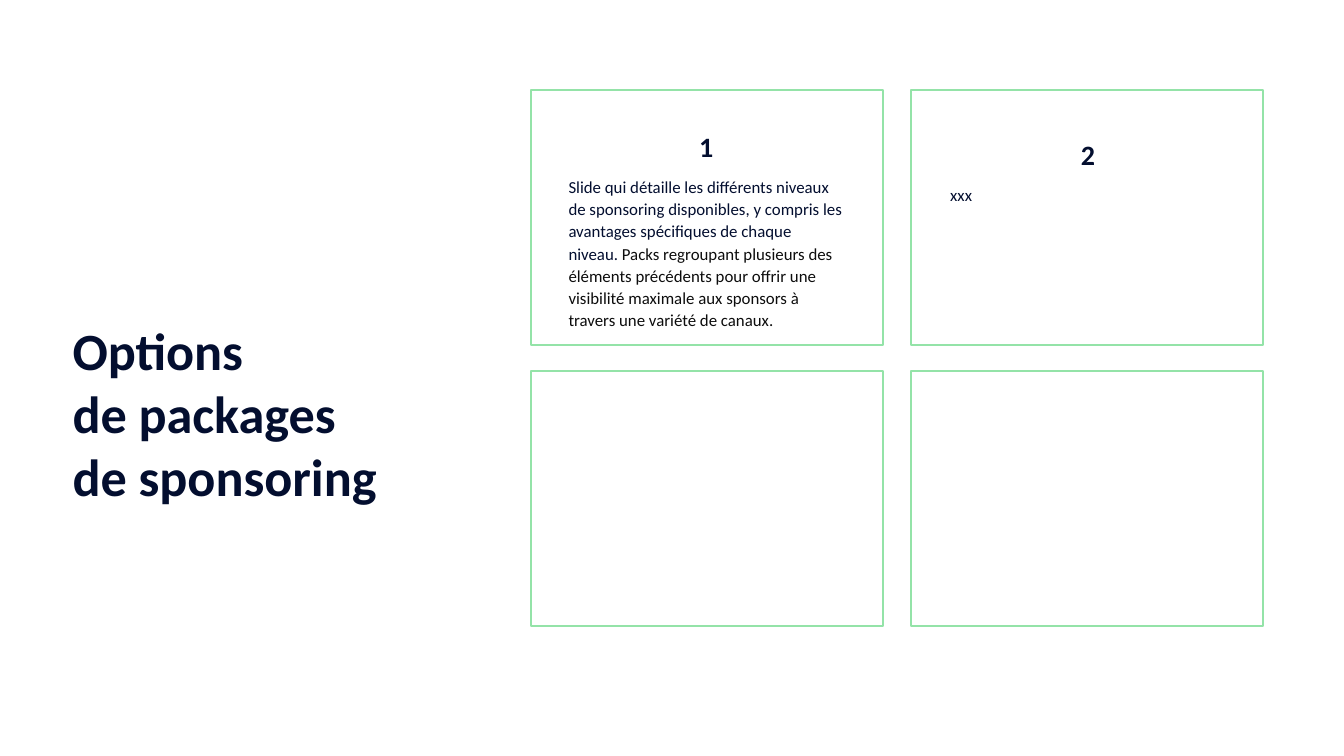
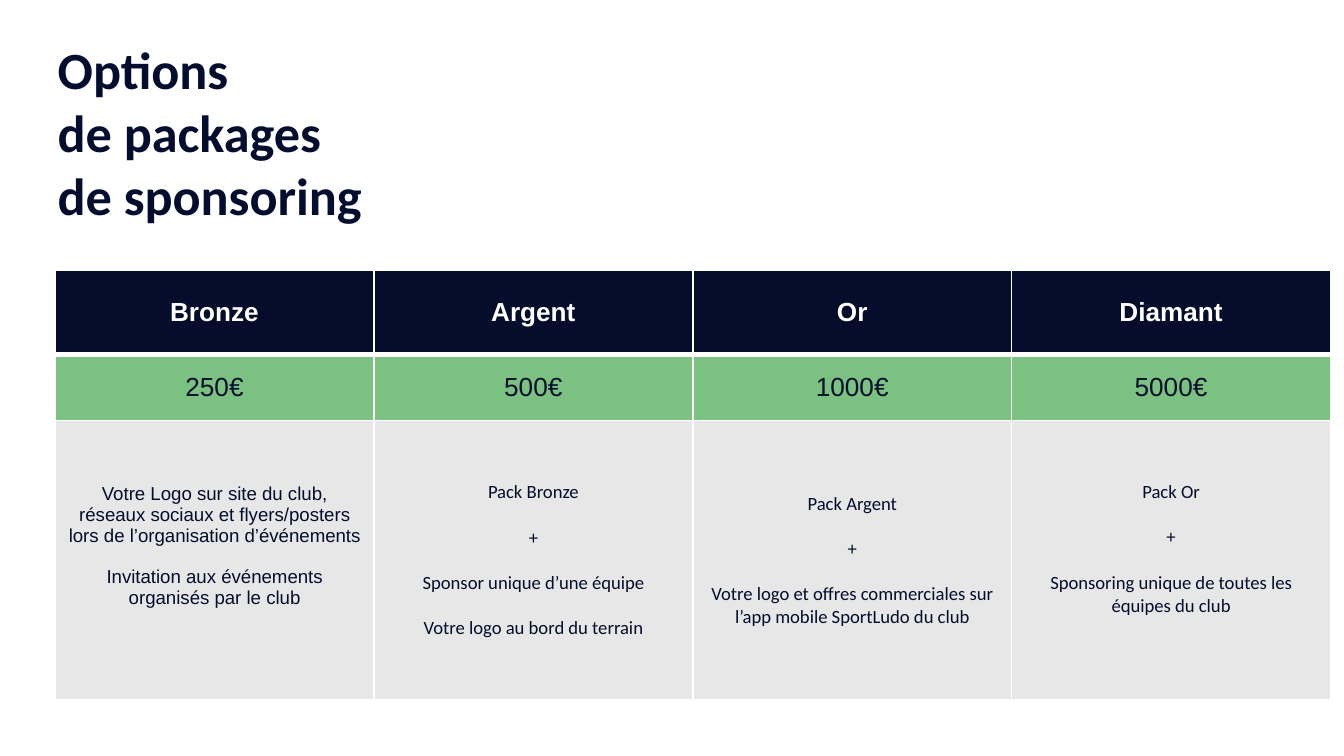
from lxml import etree
from pptx import Presentation
from pptx import util as u
from pptx.dml.color import RGBColor
from pptx.enum import shapes, text
from pptx.oxml import ns

NAVY = RGBColor(0x03, 0x0E, 0x2F)
TABLE_NAVY = RGBColor(0x04, 0x0E, 0x2C)
BLACK = RGBColor(0x0D, 0x0D, 0x0D)
WHITE = RGBColor(0xFF, 0xFF, 0xFF)
MINT = RGBColor(0x94, 0xE3, 0xA8)
GREEN = RGBColor(0x7A, 0xC1, 0x82)
GREY = RGBColor(0xE7, 0xE7, 0xE8)

TITLE = ["Options", "de packages", "de sponsoring"]
CARD_LEFTS = (3.95, 6.78)
CARD_TOPS = (0.67, 2.76)
CARD_TEXT = [
    ("Slide qui détaille les différents niveaux de sponsoring disponibles, y compris les "
     "avantages spécifiques de chaque niveau. ", NAVY),
    ("Packs regroupant plusieurs des éléments précédents pour offrir une visibilité maximale "
     "aux sponsors à travers une variété de canaux.", BLACK),
]
PACKS = [
    ("Bronze", "250€", "Arial", 0.26, [
        "Votre Logo sur site du club, réseaux sociaux et flyers/posters "
        "lors de l’organisation d’événements",
        "Invitation aux événements organisés par le club"]),
    ("Argent", "500€", "Calibri", 0.05, [
        "Pack Bronze", "+", "Sponsor unique d’une équipe", "Votre logo au bord du terrain"]),
    ("Or", "1000€", "Calibri", 0.05, [
        "Pack Argent", "+",
        "Votre logo et offres commerciales sur l’app mobile SportLudo du club"]),
    ("Diamant", "5000€", "Calibri", 0.22, [
        "Pack Or", "+", "Sponsoring unique de toutes les équipes du club"]),
]


def write(frame, paragraphs, size, font="Calibri", color=NAVY, bold=False,
          align=text.PP_ALIGN.LEFT, spacing=None, gap=0):
    """Fill a text frame; a paragraph is a string or a list of (text, colour) spans."""
    for index, content in enumerate(paragraphs):
        para = frame.paragraphs[0] if index == 0 else frame.add_paragraph()
        para.alignment = align
        if spacing:
            para.line_spacing = spacing
        if index and gap:
            para.space_before = u.Pt(gap)
        spans = [(content, color)] if isinstance(content, str) else content
        for words, shade in spans:
            span = para.add_run()
            span.text = words
            span.font.name = font
            span.font.size = u.Pt(size)
            span.font.bold = bold
            span.font.color.rgb = shade


def add_text(page, left, top, width, height, paragraphs, anchor=text.MSO_ANCHOR.MIDDLE, **style):
    """Add a wrapping text box with narrow margins."""
    box = page.shapes.add_textbox(*map(u.Inches, (left, top, width, height)))
    frame = box.text_frame
    frame.word_wrap = True
    frame.vertical_anchor = anchor
    frame.margin_left = frame.margin_right = u.Inches(0.02)
    frame.margin_top = frame.margin_bottom = u.Inches(0.02)
    write(frame, paragraphs, **style)
    return box


def add_title(page, left, top):
    """Add the three-line title shared by both slides."""
    box = add_text(page, left, top, 2.86, 1.46, TITLE, size=28, bold=True)
    box.text_frame.auto_size = text.MSO_AUTO_SIZE.SHAPE_TO_FIT_TEXT


def add_card(page, left, top):
    """Add an empty outlined card."""
    card = page.shapes.add_shape(
        shapes.MSO_SHAPE.RECTANGLE, *map(u.Inches, (left, top, 2.62, 1.9)))
    card.shadow.inherit = False
    card.fill.background()
    card.line.color.rgb = MINT
    card.line.width = u.Pt(1)


def add_option(page, left, top, number, body):
    """Add a numbered heading with its description."""
    add_text(page, left, top, 2.09, 0.29, [number], size=15, bold=True,
             align=text.PP_ALIGN.CENTER)
    add_text(page, left, top + 0.34, 2.09, 0.39, [body],
             anchor=text.MSO_ANCHOR.TOP, size=9, spacing=1.1)


def set_borders(cell, top, bottom):
    """Draw white borders around a table cell."""
    properties = cell._tc.get_or_add_tcPr()
    for side, width in (("L", 1), ("R", 1), ("T", top), ("B", bottom)):
        line = etree.SubElement(properties, ns.qn(f"a:ln{side}"), w=str(u.Pt(width)))
        fill = etree.SubElement(line, ns.qn("a:solidFill"))
        etree.SubElement(fill, ns.qn("a:srgbClr"), val=str(WHITE))


def fill_cell(cell, paragraphs, fill, top=1, bottom=1, margin=0.05, **style):
    """Format a table cell and write its centred text."""
    set_borders(cell, top, bottom)
    cell.fill.solid()
    cell.fill.fore_color.rgb = fill
    cell.vertical_anchor = text.MSO_ANCHOR.MIDDLE
    cell.margin_bottom = u.Inches(margin)
    write(cell.text_frame, paragraphs, align=text.PP_ALIGN.CENTER, **style)


def add_packs(page):
    """Add the table of packs, one column per pack."""
    heights = (0.63, 0.49, 2.08)
    width = 9.49
    table = page.shapes.add_table(
        len(heights), len(PACKS), *map(u.Inches, (0.41, 2.01, width, sum(heights)))).table
    table.horz_banding = False
    for row, height in zip(table.rows, heights):
        row.height = u.Inches(height)
    for index, (name, price, font, margin, offers) in enumerate(PACKS):
        table.columns[index].width = u.Inches(width / len(PACKS))
        fill_cell(table.cell(0, index), [name], TABLE_NAVY, bottom=3,
                  size=14, font="Arial", color=WHITE, bold=True)
        fill_cell(table.cell(1, index), [price], GREEN, top=3,
                  size=14, font="Arial", color=TABLE_NAVY)
        fill_cell(table.cell(2, index), offers, GREY, margin=margin, size=10, font=font,
                  color=TABLE_NAVY, gap=11 if font == "Arial" else 12.2)


def main():
    """Build and save both slides."""
    deck = Presentation()
    deck.slide_width = u.Inches(10)
    deck.slide_height = u.Inches(10 * 9 / 16)
    blank = deck.slide_layouts[6]

    page = deck.slides.add_slide(blank)
    add_title(page, 0.52, 2.34)
    for top in CARD_TOPS:
        for left in CARD_LEFTS:
            add_card(page, left, top)
    add_option(page, 4.21, 0.94, "1", CARD_TEXT)
    add_option(page, 7.05, 1, "2", "xxx")

    page = deck.slides.add_slide(blank)
    add_title(page, 0.41, 0.25)
    add_packs(page)

    deck.save("out.pptx")


if __name__ == "__main__":
    main()
